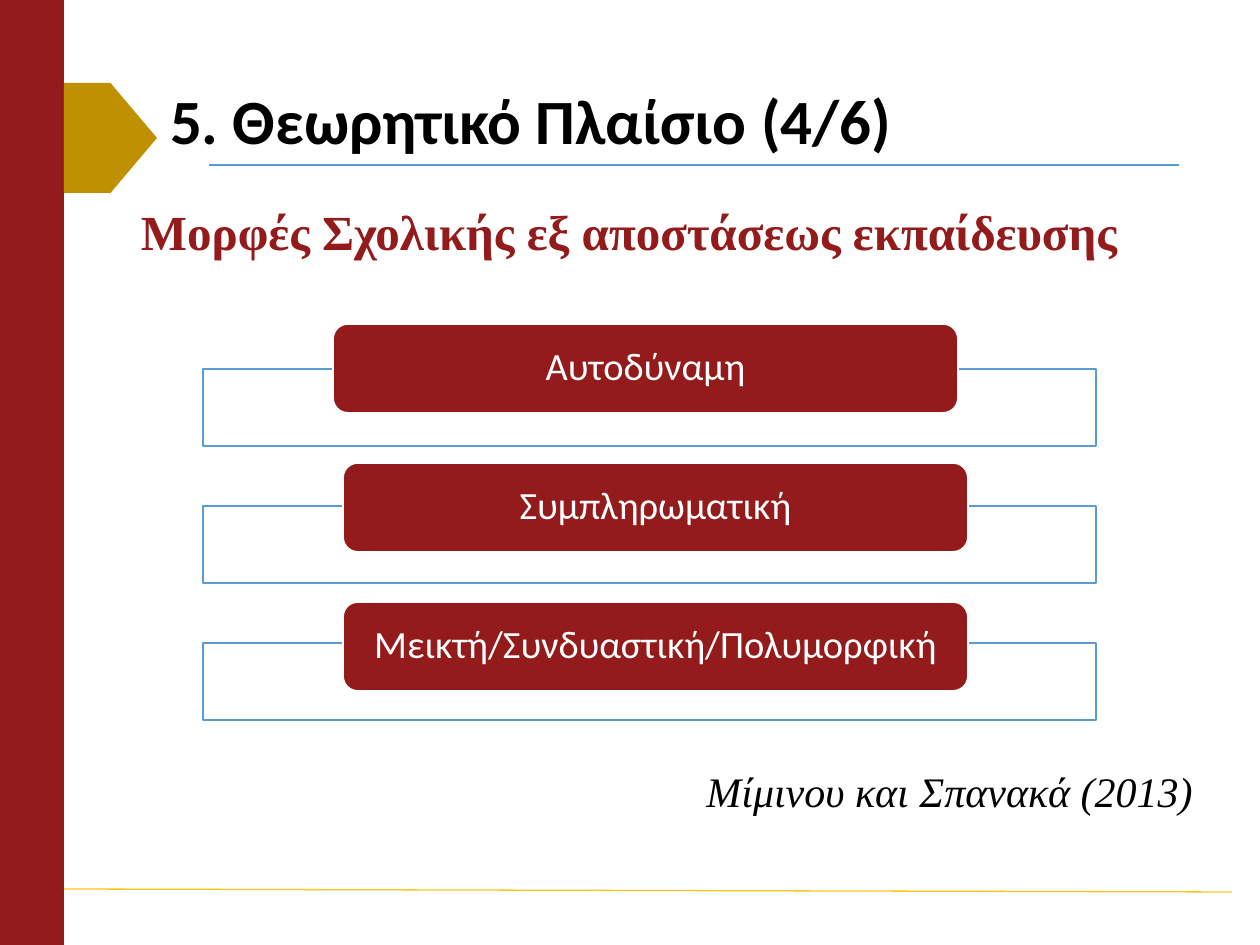
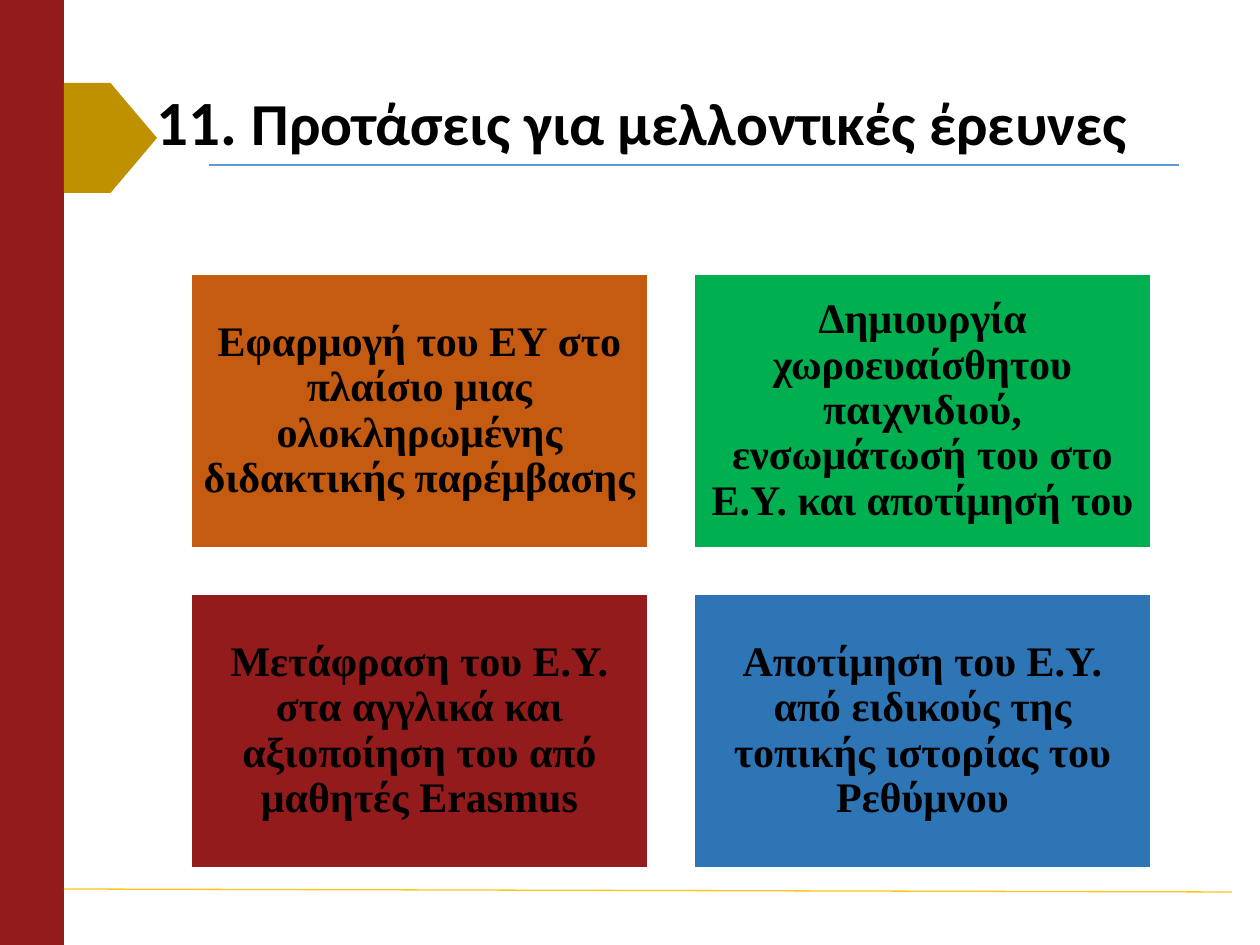
from lxml import etree
from pptx import Presentation
from pptx.dml.color import RGBColor
from pptx.enum.shapes import MSO_CONNECTOR, MSO_SHAPE
from pptx.enum.text import MSO_ANCHOR, PP_ALIGN
from pptx.oxml.ns import qn
from pptx.util import Pt

PX_PER_INCH = 126
SLIDE_W, SLIDE_H = 1260, 945
BAND_W = 64

RECT = MSO_SHAPE.RECTANGLE
ROUNDED = MSO_SHAPE.ROUNDED_RECTANGLE
PENTAGON = MSO_SHAPE.PENTAGON
STRAIGHT = MSO_CONNECTOR.STRAIGHT
TOP, MIDDLE = MSO_ANCHOR.TOP, MSO_ANCHOR.MIDDLE
LEFT, CENTER, RIGHT = PP_ALIGN.LEFT, PP_ALIGN.CENTER, PP_ALIGN.RIGHT

SANS, SERIF = "Calibri", "Times New Roman"
COLORS = {
    "crimson": "931B1B",
    "gold": "BF9000",
    "yellow": "FFC61A",
    "sky": "5B9BD5",
    "orange": "C55A11",
    "green": "00B050",
    "blue": "2E75B6",
    "white": "FFFFFF",
    "black": "000000",
}


def px(*lengths):
    return [length * 914400 // PX_PER_INCH for length in lengths]


def rgb(name):
    return RGBColor.from_string(COLORS[name])


def style_run(run, font, size, color="black", bold=False, italic=False):
    run.font.name = font
    run.font.size = Pt(size)
    run.font.color.rgb = rgb(color)
    run.font.bold = bold
    run.font.italic = italic


def set_frame(frame, align, anchor, margins=(13, 6), spacing=1.0):
    """Lay out a one-paragraph frame; margins are horizontal, vertical."""
    frame.word_wrap = True
    frame.vertical_anchor = anchor
    frame.margin_left = frame.margin_right = px(margins[0])[0]
    frame.margin_top = frame.margin_bottom = px(margins[1])[0]
    frame.paragraphs[0].alignment = align
    frame.paragraphs[0].line_spacing = spacing


def add_block(slide, kind, box, fill, line=None):
    block = slide.shapes.add_shape(kind, *px(*box))
    block.shadow.inherit = False
    block.fill.solid()
    block.fill.fore_color.rgb = rgb(fill)
    if line:
        block.line.color.rgb = rgb(line)
        block.line.width = Pt(1)
    else:
        block.line.fill.background()
    return block


def add_label(block, text, margins, **font):
    frame = block.text_frame
    frame.text = text
    set_frame(frame, CENTER, MIDDLE, margins, 0.9)
    style_run(frame.paragraphs[0].runs[0], **font)


def add_rule(slide, start, end, color):
    rule = slide.shapes.add_connector(STRAIGHT, *px(*start, *end))
    rule.line.color.rgb = rgb(color)
    rule.line.width = Pt(0.75)
    etree.SubElement(rule._element.spPr, qn("a:effectLst"))


def add_text(slide, box, text, align, **font):
    frame = slide.shapes.add_textbox(*px(*box)).text_frame
    frame.text = text
    set_frame(frame, align, TOP)
    style_run(frame.paragraphs[0].runs[0], font=SERIF, **font)


def add_title(slide, box, parts):
    """Write a title from (text, size) parts."""
    frame = slide.shapes.add_textbox(*px(*box)).text_frame
    set_frame(frame, LEFT, MIDDLE, spacing=0.9)
    for text, size in parts:
        run = frame.paragraphs[0].add_run()
        run.text = text
        style_run(run, SANS, size, bold=True)


def add_base_slide(prs):
    """Add a blank slide with the side band, title marker and rules."""
    slide = prs.slides.add_slide(prs.slide_layouts[6])
    add_block(slide, RECT, (0, 0, BAND_W, SLIDE_H), "crimson")
    add_rule(slide, (209, 165), (1179, 165), "sky")
    add_rule(slide, (BAND_W, 889), (1232, 892), "yellow")
    add_block(slide, PENTAGON, (BAND_W, 83, 93, 110), "gold")
    return slide


def add_form(slide, row, name, left):
    """Add one form of education: an outlined tray with a label tab on it."""
    add_block(slide, RECT, (203, 369 + 137 * row, 893, 77), "white", "sky")
    tab = add_block(slide, ROUNDED, (left, 324 + 139 * row, 625, 89),
                    "crimson", "white")
    add_label(tab, name, (24, 0), font=SANS, size=22, color="white")


def add_proposal(slide, index, text, color):
    row, column = divmod(index, 2)
    card_w, card_h, gap = 457, 274, 46
    box = (191 + column * (card_w + gap), 274 + row * (card_h + gap),
           card_w, card_h)
    card = add_block(slide, RECT, box, color, "white")
    add_label(card, text, (12, 12), font=SERIF, size=24, bold=True)


def build_forms_slide(prs):
    slide = add_base_slide(prs)
    add_title(slide, (157, 50, 1016, 149), [("5. Θεωρητικό Πλαίσιο (4/6)", 36)])
    add_text(slide, (123, 195, 1012, 131),
             "Μορφές Σχολικής εξ αποστάσεως εκπαίδευσης", CENTER,
             size=28, color="crimson", bold=True)
    forms = [
        ("Αυτοδύναμη", 333),
        ("Συμπληρωματική", 343),
        ("Μεικτή/Συνδυαστική/Πολυμορφική", 343),
    ]
    for row, (name, left) in enumerate(forms):
        add_form(slide, row, name, left)
    add_text(slide, (650, 760, 556, 63), "Μίμινου και Σπανακά (2013)", RIGHT,
             size=24, italic=True)


def build_proposals_slide(prs):
    slide = add_base_slide(prs)
    add_title(slide, (144, 86, 1071, 79),
              [("11. ", 36), ("Προτάσεις για μελλοντικές έρευνες", 34)])
    proposals = [
        ("Εφαρμογή του ΕΥ στο πλαίσιο μιας ολοκληρωμένης "
         "διδακτικής παρέμβασης", "orange"),
        ("Δημιουργία χωροευαίσθητου παιχνιδιού, ενσωμάτωσή του στο "
         "Ε.Υ. και αποτίμησή του", "green"),
        ("Μετάφραση του Ε.Υ. στα αγγλικά και αξιοποίηση του από "
         "μαθητές Erasmus", "crimson"),
        ("Αποτίμηση του Ε.Υ. από ειδικούς της τοπικής ιστορίας του "
         "Ρεθύμνου", "blue"),
    ]
    for index, (text, color) in enumerate(proposals):
        add_proposal(slide, index, text, color)


def main():
    prs = Presentation()
    prs.slide_width, prs.slide_height = px(SLIDE_W, SLIDE_H)
    build_forms_slide(prs)
    build_proposals_slide(prs)
    prs.save("out.pptx")


if __name__ == "__main__":
    main()
